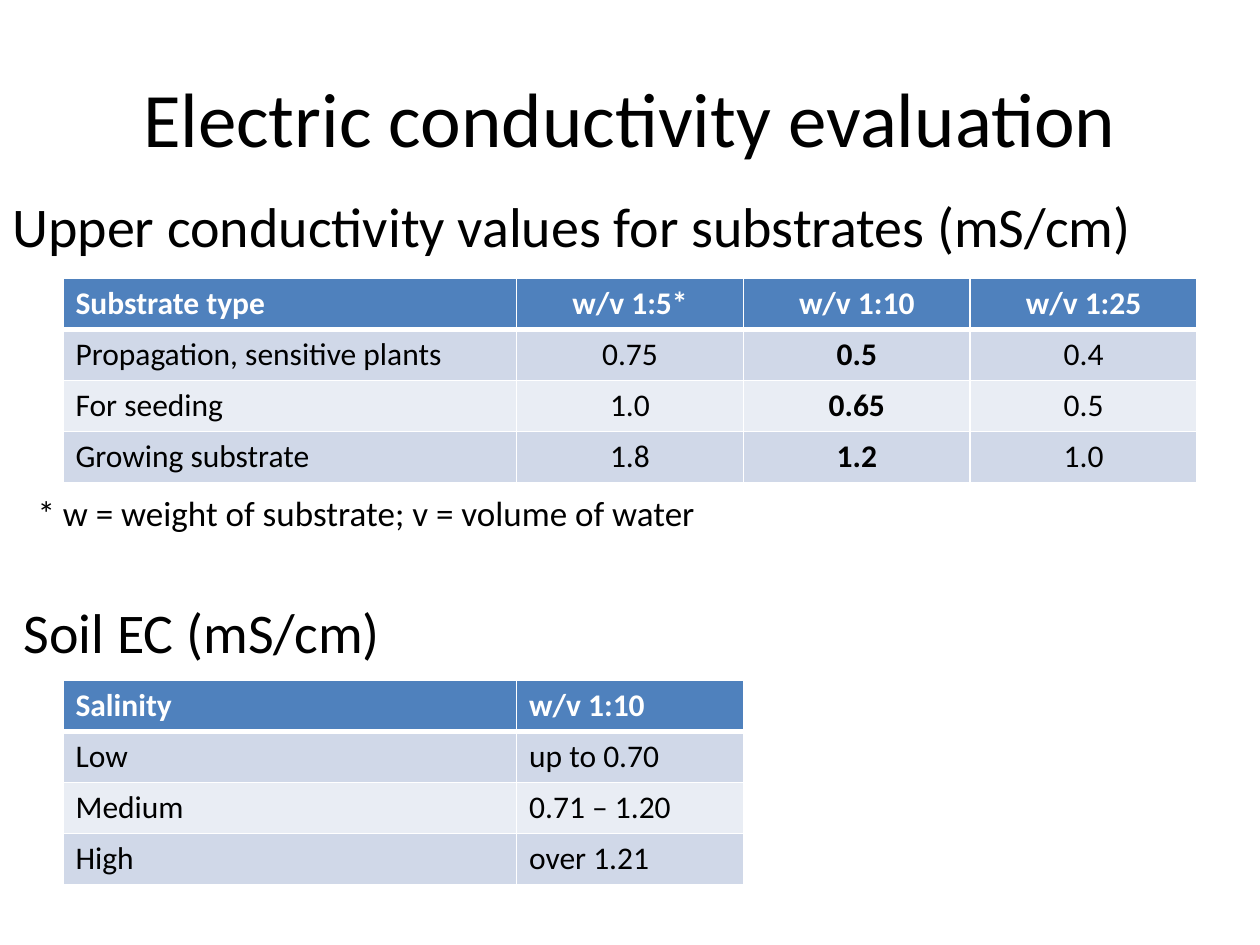
import pptx
import pptx.dml.color
import pptx.enum.text
import pptx.oxml
import pptx.oxml.ns
import pptx.util
from pptx.util import Inches

ALIGN = pptx.enum.text.PP_ALIGN
ANCHOR = pptx.enum.text.MSO_ANCHOR
HEADER_FILL = "4F81BD"
BAND_FILLS = ["D0D8E8", "E9EDF4"]
ROW_HEIGHT = 1.62 / 4


def add_run(para, text, size, color, bold=False):
    span = para.add_run()
    span.text = text
    span.font.size = pptx.util.Pt(size)
    span.font.name = "Calibri"
    span.font.bold = bold
    span.font.color.rgb = pptx.dml.color.RGBColor.from_string(color)


def set_borders(cell, bottom_width):
    """Draw white cell borders, 1 pt except for the given bottom width."""
    properties = cell._tc.get_or_add_tcPr()
    widths = {"lnL": 1, "lnR": 1, "lnT": 1, "lnB": bottom_width}
    for position, (side, width) in enumerate(widths.items()):
        line = pptx.oxml.parse_xml(
            f'<a:{side} {pptx.oxml.ns.nsdecls("a")} w="{pptx.util.Pt(width)}">'
            f'<a:solidFill><a:srgbClr val="FFFFFF"/></a:solidFill></a:{side}>'
        )
        properties.insert(position, line)


deck = pptx.Presentation()
deck.slide_width = Inches(10)
deck.slide_height = Inches(7.5)
page = deck.slides.add_slide(deck.slide_layouts[6])

# Title, section headings and footnote: text, place, size, alignment
texts = [
    ("Electric conductivity evaluation", (0.5, 0.3, 9, 1.25), 44, ALIGN.CENTER),
    ("Upper conductivity values for substrates (mS/cm)", (0, 1.55, 9.69, 0.47), 32, ALIGN.LEFT),
    ("* w = weight of substrate; v = volume of water", (0.2, 3.83, 9, 0.47), 20, ALIGN.LEFT),
    ("Soil EC (mS/cm)", (0.09, 4.77, 9, 0.47), 32, ALIGN.LEFT),
]
for text, place, size, alignment in texts:
    box = page.shapes.add_textbox(*[Inches(length) for length in place])
    frame = box.text_frame
    frame.word_wrap = True
    frame.vertical_anchor = ANCHOR.MIDDLE
    para = frame.paragraphs[0]
    para.alignment = alignment
    add_run(para, text, size, "000000")

substrate_rows = [
    ["Substrate type", "w/v 1:5*", "w/v 1:10", "w/v 1:25"],
    ["Propagation, sensitive plants", "0.75", "0.5", "0.4"],
    ["For seeding", "1.0", "0.65", "0.5"],
    ["Growing substrate", "1.8", "1.2", "1.0"],
]
salinity_rows = [
    ["Salinity", "w/v 1:10"],
    ["Low", "up to 0.70"],
    ["Medium", "0.71 – 1.20"],
    ["High", "over 1.21"],
]

# Each table: rows, top, alignment of value columns, bold column
tables = [
    (substrate_rows, 2.21, ALIGN.CENTER, 2),
    (salinity_rows, 5.4, ALIGN.LEFT, None),
]
for rows, top, value_alignment, bold_column in tables:
    widths = [3.6] + [1.8] * (len(rows[0]) - 1)
    table = page.shapes.add_table(
        len(rows), len(widths), Inches(0.5), Inches(top),
        Inches(sum(widths)), Inches(ROW_HEIGHT * len(rows)),
    ).table
    for column, width in zip(table.columns, widths):
        column.width = Inches(width)
    for r, values in enumerate(rows):
        header = r == 0
        table.rows[r].height = Inches(ROW_HEIGHT)
        fill = HEADER_FILL if header else BAND_FILLS[(r - 1) % 2]
        for c, value in enumerate(values):
            cell = table.cell(r, c)
            cell.fill.solid()
            cell.fill.fore_color.rgb = pptx.dml.color.RGBColor.from_string(fill)
            set_borders(cell, 3 if header else 1)
            para = cell.text_frame.paragraphs[0]
            para.alignment = value_alignment if c else ALIGN.LEFT
            add_run(para, value, 18, "FFFFFF" if header else "000000",
                    bold=header or c == bold_column)

deck.save("out.pptx")
